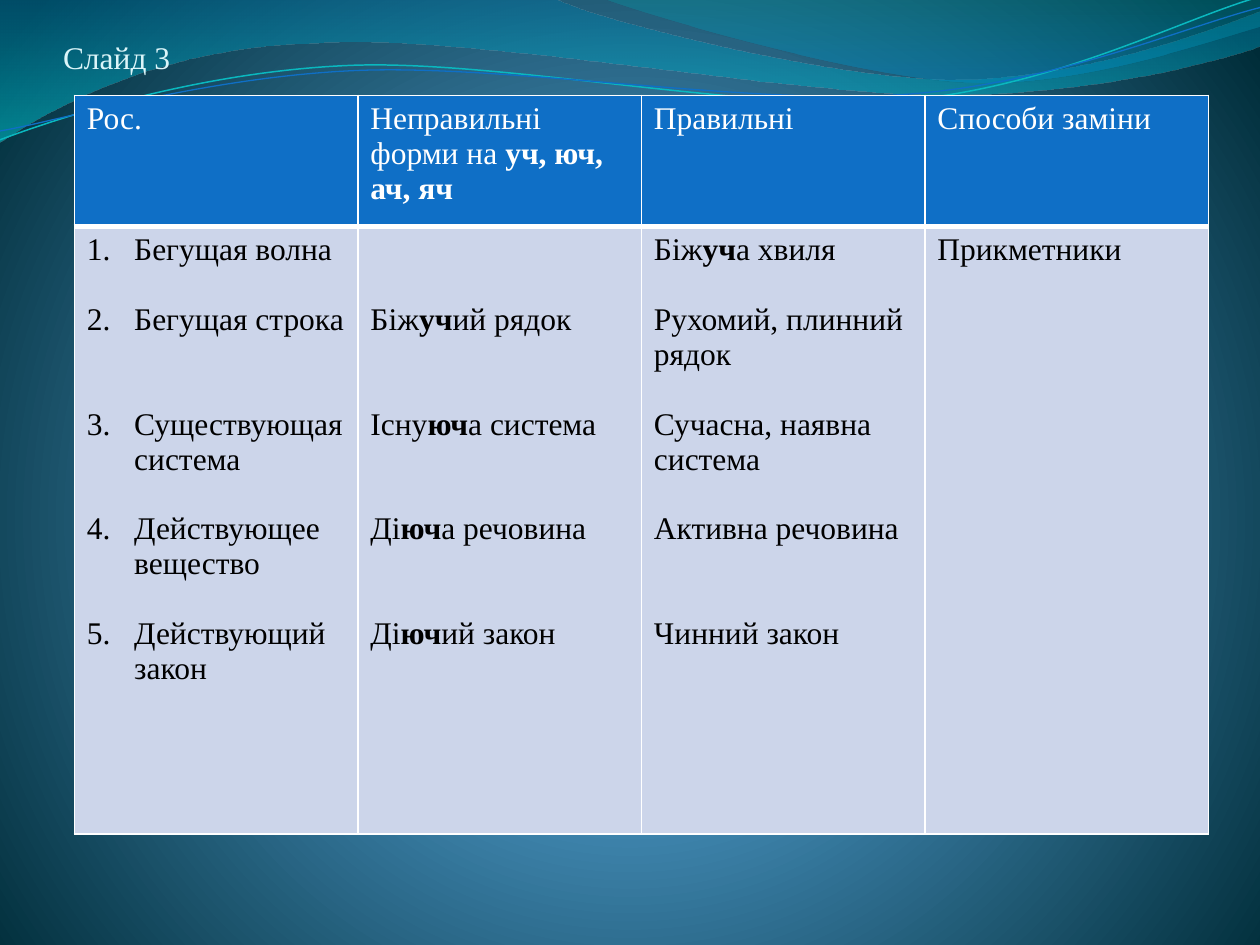
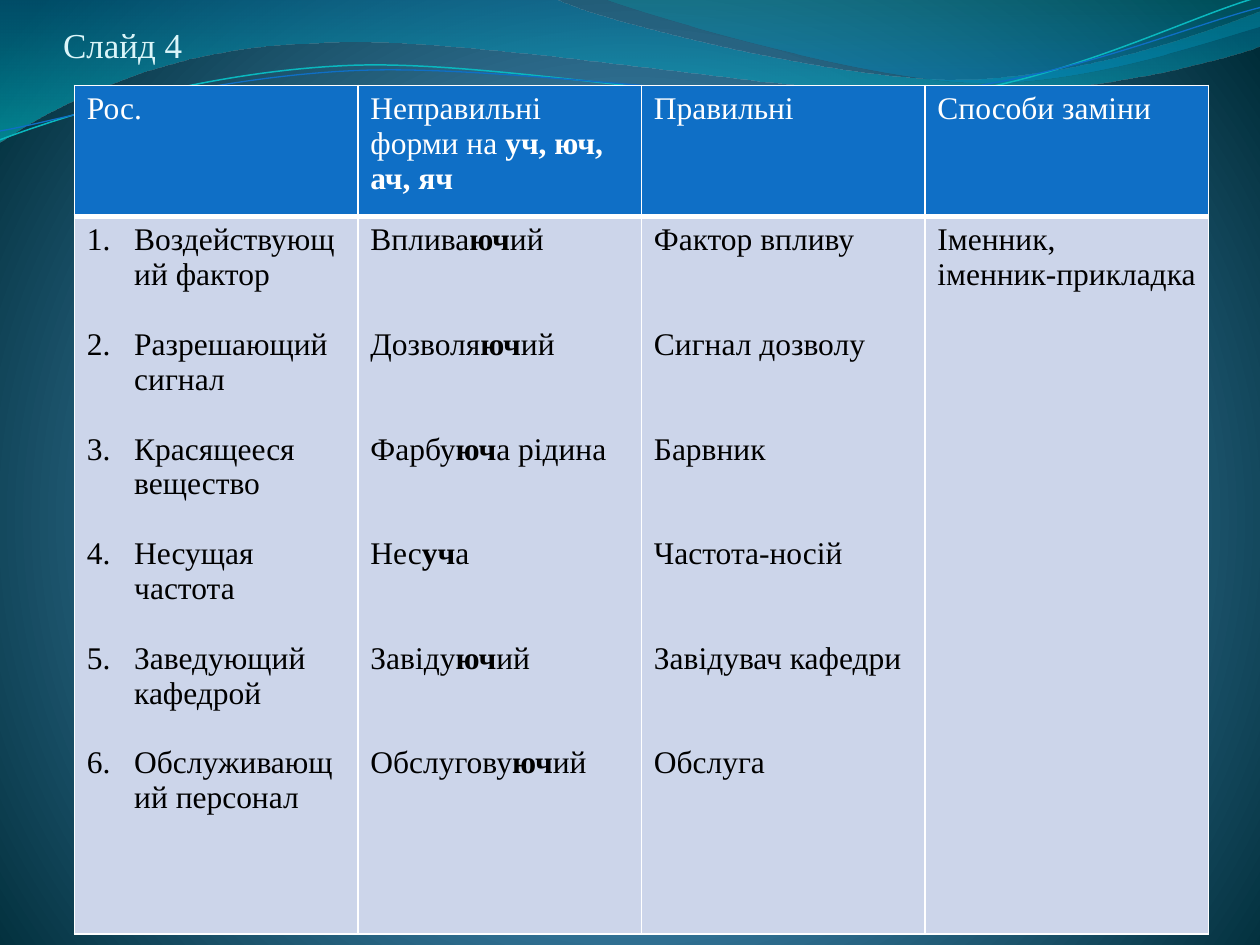
"""Build two slides of participle translation tables over a shared wave background."""
from lxml.etree import SubElement
from pptx import Presentation
from pptx.dml.color import RGBColor
from pptx.enum.text import MSO_ANCHOR as Anchor, MSO_AUTO_SIZE as AutoSize, PP_ALIGN as Align
from pptx.oxml import parse_xml
from pptx.oxml.ns import nsdecls, qn
from pptx.util import Inches, Pt

FONT = "Times New Roman"
WHITE, BLACK, TITLE = "FFFFFF", "000000", "DBF5F9"
HEADER_FILL, BODY_FILL = "0F6FC6", "CCD5EA"
TEXT_SIZE = 18
LINE_HEIGHT = Pt(19.93)
HANGING = Pt(27)


def paint_gradient(owner, fill, stops, direction):
    fill.solid()
    solid = owner.find(".//" + qn("a:solidFill"))
    marks = "".join(
        f'<a:gs pos="{pos * 1000}"><a:srgbClr val="{color}">'
        f'<a:alpha val="{opacity * 1000}"/></a:srgbClr></a:gs>'
        for pos, color, opacity in stops)
    solid.getparent().replace(solid, parse_xml(
        f'<a:gradFill {nsdecls("a")} rotWithShape="1"><a:gsLst>{marks}</a:gsLst>'
        f'{direction}</a:gradFill>'))


def write_marked(para, text, color, size=TEXT_SIZE):
    for index, part in enumerate(text.split("*")):
        if part:
            span = para.add_run()
            span.text = part
            span.font.name, span.font.size = FONT, Pt(size)
            span.font.bold = index % 2 == 1
            span.font.color.rgb = RGBColor.from_string(color)


deck = Presentation()
deck.slide_width, deck.slide_height = Inches(10), Inches(7.5)
across, down = deck.slide_width / 100, deck.slide_height / 100
master = deck.slide_master
title_only = deck.slide_layouts[5]

paint_gradient(
    master.element, master.background.fill,
    [(0, "4AA0D6", 100), (25, "4C98C7", 100), (100, "002C38", 100)],
    '<a:path path="circle"><a:fillToRect l="10000" t="110000" r="10000" b="100000"/></a:path>')

waves = [
    ([(0, 0), (4.4, -0.01), (4.76, 0.17, 6.64, 0.63, 7.58, 0.63),
      (8.53, 0.63, 9.58, 0.26, 10, 0.09), (10.01, 0.36),
      (9.83, 0.44, 8.7, 0.76, 7.46, 0.75), (6.22, 0.75, 3.82, 0.28, 2.57, 0.34),
      (1.29, 0.36, 0.46, 0.83, -0.01, 1.13), (0, 0)],
     [(0, "0074A1", 45), (100, "00C6CF", 55)], None),
    ([(4.79, -0.01), (5.09, 0.11, 6.82, 0.62, 7.69, 0.65),
      (8.56, 0.69, 9.61, 0.32, 10, 0.21), (10, 0), (4.79, -0.01)],
     [(0, "00A1A9", 30), (80, "008BBF", 45)], None),
    ([(0, 1.11), (0.48, 0.93, 1.58, 0.57, 2.77, 0.52),
      (3.95, 0.47, 5.93, 0.89, 7.13, 0.8), (8.33, 0.71, 9.38, 0.15, 9.98, -0.02)],
     None, ("0AB8BF", 0.85)),
    ([(0, 1.04), (0.47, 0.96, 1.64, 0.61, 2.83, 0.56),
      (4.03, 0.51, 5.97, 0.84, 7.17, 0.75), (8.36, 0.67, 9.41, 0.21, 10, 0.06)],
     None, ("0F6FC6", 0.75)),
]

headings = ["Рос.", "Неправильні форми на *уч, юч, ач, яч*", "Правильні", "Способи заміни"]

lessons = [
    {"title": "Слайд 3", "size": 18, "title_rows": (2.8, 5.2),
     "table_top": 10.1, "body_height": 64.27,
     "columns": [
         [(0, "Бегущая волна"), (1, "Бегущая строка"), (2, "Существующая система"),
          (1, "Действующее вещество"), (1, "Действующий закон")],
         [(2, "Біж*уч*ий рядок"), (2, "Існу*юч*а система"),
          (2, "Ді*юч*а речовина"), (2, "Ді*юч*ий закон")],
         [(0, "Біж*уч*а хвиля"), (1, "Рухомий, плинний рядок"),
          (1, "Сучасна, наявна система"), (1, "Активна речовина"), (2, "Чинний закон")],
         [(0, "Прикметники")]]},
    {"title": "Слайд 4", "size": 20, "title_rows": (0, 6.93),
     "table_top": 9.03, "body_height": 75.93,
     "columns": [
         [(0, "Воздействующий фактор"), (1, "Разрешающий сигнал"),
          (1, "Красящееся вещество"), (1, "Несущая частота"),
          (1, "Заведующий кафедрой"), (1, "Обслуживающий персонал")],
         [(0, "Вплива*юч*ий"), (2, "Дозволя*юч*ий"), (2, "Фарбу*юч*а рідина"),
          (2, "Нес*уч*а"), (2, "Завіду*юч*ий"), (2, "Обслугову*юч*ий")],
         [(0, "Фактор впливу"), (2, "Сигнал дозволу"), (2, "Барвник"),
          (2, "Частота-носій"), (2, "Завідувач кафедри"), (2, "Обслуга")],
         [(0, "Іменник,"), (0, "іменник-прикладка")]]},
]

pages = [deck.slides.add_slide(title_only) for lesson in lessons]

for number, (steps, stops, stroke) in enumerate(waves):
    points = [(step[k] * 1000, step[k + 1] * 1000)
              for step in steps for k in range(0, len(step), 2)]
    builder = pages[0].shapes.build_freeform(*points[0], scale=Inches(1) / 1000)
    builder.add_line_segments(points[1:], close=stops is not None)
    wave = builder.convert_to_shape()
    segments = iter(list(wave.element.iter(qn("a:lnTo"))))
    for step in steps[1:]:
        first, *controls = [next(segments) for k in range(len(step) // 2)]
        if controls:
            curve = parse_xml(f'<a:cubicBezTo {nsdecls("a")}/>')
            first.addprevious(curve)
            for segment in (first, *controls):
                curve.append(segment[0])
                segment.getparent().remove(segment)
    wave.shadow.inherit = False
    if stops:
        paint_gradient(wave.element, wave.fill, stops, '<a:lin ang="5400000" scaled="0"/>')
        wave.line.fill.background()
    else:
        wave.fill.background()
        wave.line.color.rgb = RGBColor.from_string(stroke[0])
        wave.line.width = Pt(stroke[1])
    wave.name = f"Wave {number + 1}"
    wave.element.find(".//" + qn("p:cNvPr")).set("id", str(20 + number))
    master.shapes.element.append(wave.element)

for page, lesson in zip(pages, lessons):
    title = page.shapes.title
    top, height = lesson["title_rows"]
    title.left, title.width = int(5 * across), int(90 * across)
    title.top, title.height = int(top * down), int(height * down)
    frame = title.text_frame
    frame.auto_size, frame.word_wrap = AutoSize.NONE, True
    frame.vertical_anchor = Anchor.BOTTOM
    frame.margin_left = frame.margin_right = frame.margin_bottom = 0
    frame.margin_top = Inches(0.05)
    frame.paragraphs[0].alignment = Align.LEFT
    write_marked(frame.paragraphs[0], lesson["title"], TITLE, lesson["size"])

    row_heights = [13.87, lesson["body_height"]]
    table = page.shapes.add_table(
        2, len(headings), int(5.9 * across), int(lesson["table_top"] * down),
        int(90 * across), int(sum(row_heights) * down)).table
    for row, share in zip(table.rows, row_heights):
        row.height = int(share * down)

    body_rows = [[[(0, heading)] for heading in headings], lesson["columns"]]
    for row_index, entries_by_column in enumerate(body_rows):
        is_header = row_index == 0
        for column_index, entries in enumerate(entries_by_column):
            cell = table.cell(row_index, column_index)
            props = cell._tc.get_or_add_tcPr()
            thick_side = "lnB" if is_header else "lnT"
            for side in ("lnL", "lnR", "lnT", "lnB"):
                width = Pt(3 if side == thick_side else 1)
                border = SubElement(props, qn("a:" + side), w=str(width))
                SubElement(SubElement(border, qn("a:solidFill")), qn("a:srgbClr"), val=WHITE)
            cell.fill.solid()
            cell.fill.fore_color.rgb = RGBColor.from_string(
                HEADER_FILL if is_header else BODY_FILL)
            cell.margin_top = Inches(0.05) + entries[0][0] * LINE_HEIGHT
            for index, (gap, text) in enumerate(entries):
                para = cell.text_frame.paragraphs[0] if index == 0 \
                    else cell.text_frame.add_paragraph()
                if index and gap:
                    para.space_before = gap * LINE_HEIGHT
                if not is_header and column_index == 0:
                    para_props = para._p.get_or_add_pPr()
                    para_props.set("marL", str(HANGING))
                    para_props.set("indent", str(-HANGING))
                    SubElement(para_props, qn("a:buFont"), typeface="+mj-lt")
                    SubElement(para_props, qn("a:buAutoNum"), type="arabicPeriod")
                write_marked(para, text, WHITE if is_header else BLACK)

deck.save("out.pptx")
